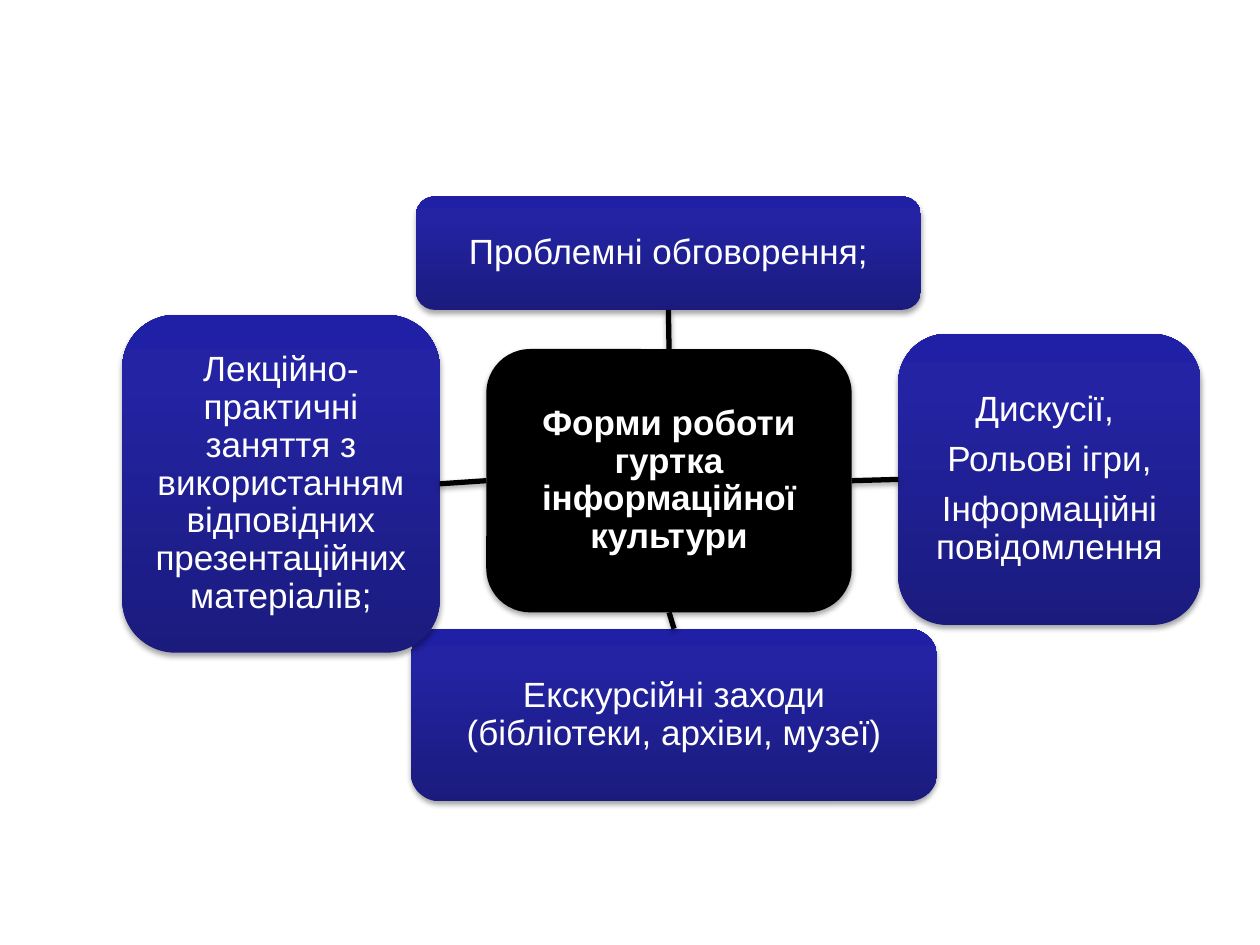
from copy import deepcopy
from dataclasses import dataclass

from lxml import etree
from pptx import Presentation
from pptx import util as u
from pptx.dml.color import RGBColor
from pptx.enum import shapes, text
from pptx.oxml.ns import qn


@dataclass(frozen=True)
class Theme:
    font: str = "Arial"
    size: int = 20
    text_color: str = "FFFFFF"
    hub_color: str = "000000"
    line_color: str = "000000"
    line_width: int = 3
    gradient: tuple = ((0, "1B1B7E"), (0.8, "2323A3"), (1, "2020A6"))
    shadow_color: str = "000000"


THEME = Theme()
TOP, LEFT, BOTTOM, RIGHT = range(4)  # connection sites of a rectangle

HUB = ((3.86, 2.77, 2.9, 2.09), ["Форми роботи гуртка інформаційної культури"])

# Hub side, node side, box, paragraphs; later nodes lie in front
NODES = [
    (TOP, BOTTOM, (3.3, 1.56, 4.01, 0.9), ["Проблемні обговорення;"]),
    (RIGHT, LEFT, (7.13, 2.65, 2.4, 2.31),
     ["Дискусії, ", "Рольові ігри,", "Інформаційні повідомлення"]),
    (BOTTOM, TOP, (3.26, 4.99, 4.18, 1.37),
     ["Екскурсійні заходи (бібліотеки, архіви, музеї)"]),
    (LEFT, RIGHT, (0.97, 2.5, 2.52, 2.68),
     ["Лекційно-практичні заняття з використанням відповідних "
      "презентаційних матеріалів;"]),
]


def add_shadow(effects):
    """Put a soft downward shadow into an effect list."""
    shadow = etree.SubElement(
        effects, qn("a:outerShdw"), blurRad=str(u.Pt(3.1)), dist=str(u.Pt(1.8)),
        dir="5400000", rotWithShape="0")
    color = etree.SubElement(shadow, qn("a:srgbClr"), val=THEME.shadow_color)
    etree.SubElement(color, qn("a:alpha"), val="35000")


def fill_gradient(shape):
    """Fill from the bottom upwards with the three theme stops."""
    shape.fill.gradient()
    shape.fill.gradient_angle = 90
    stop_list = shape._element.spPr.find(".//" + qn("a:gsLst"))
    stop_list.append(deepcopy(stop_list[-1]))
    for stop, (position, color) in zip(shape.fill.gradient_stops, THEME.gradient):
        stop.position = position
        stop.color.rgb = RGBColor.from_string(color)


def write_text(shape, lines, bold):
    frame = shape.text_frame
    frame.word_wrap = True
    frame.vertical_anchor = text.MSO_ANCHOR.MIDDLE
    frame.margin_left = frame.margin_right = u.Inches(0.06)
    frame.margin_top = frame.margin_bottom = u.Inches(0.06)
    for index, line in enumerate(lines):
        paragraph = frame.add_paragraph() if index else frame.paragraphs[0]
        paragraph.alignment = text.PP_ALIGN.CENTER
        paragraph.line_spacing = 0.9
        paragraph.space_after = u.Pt(0.35 * THEME.size)
        run = paragraph.add_run()
        run.text = line
        run.font.name = THEME.font
        run.font.size = u.Pt(THEME.size)
        run.font.bold = bold
        run.font.color.rgb = RGBColor.from_string(THEME.text_color)


def add_box(slide, box, lines, is_hub=False):
    shape = slide.shapes.add_shape(
        shapes.MSO_SHAPE.ROUNDED_RECTANGLE, *map(u.Inches, box))
    if is_hub:
        shape.fill.solid()
        shape.fill.fore_color.rgb = RGBColor.from_string(THEME.hub_color)
    else:
        fill_gradient(shape)
    shape.line.fill.background()
    shape.shadow.inherit = False
    add_shadow(shape._element.spPr.find(qn("a:effectLst")))
    write_text(shape, lines, bold=is_hub)
    return shape


def add_link(slide, hub, hub_side, node, node_side):
    link = slide.shapes.add_connector(shapes.MSO_CONNECTOR.STRAIGHT, 0, 0, 0, 0)
    link.begin_connect(hub, hub_side)
    link.end_connect(node, node_side)
    link.line.color.rgb = RGBColor.from_string(THEME.line_color)
    link.line.width = u.Pt(THEME.line_width)
    add_shadow(etree.SubElement(link._element.spPr, qn("a:effectLst")))


def main():
    presentation = Presentation()
    presentation.slide_width = u.Inches(10)
    presentation.slide_height = u.Inches(7.5)
    slide = presentation.slides.add_slide(presentation.slide_layouts[6])

    # Central topic
    hub = add_box(slide, *HUB, is_hub=True)

    # Surrounding forms of work, each joined to the centre
    for hub_side, node_side, box, lines in NODES:
        node = add_box(slide, box, lines)
        add_link(slide, hub, hub_side, node, node_side)

    presentation.save("out.pptx")


if __name__ == "__main__":
    main()
